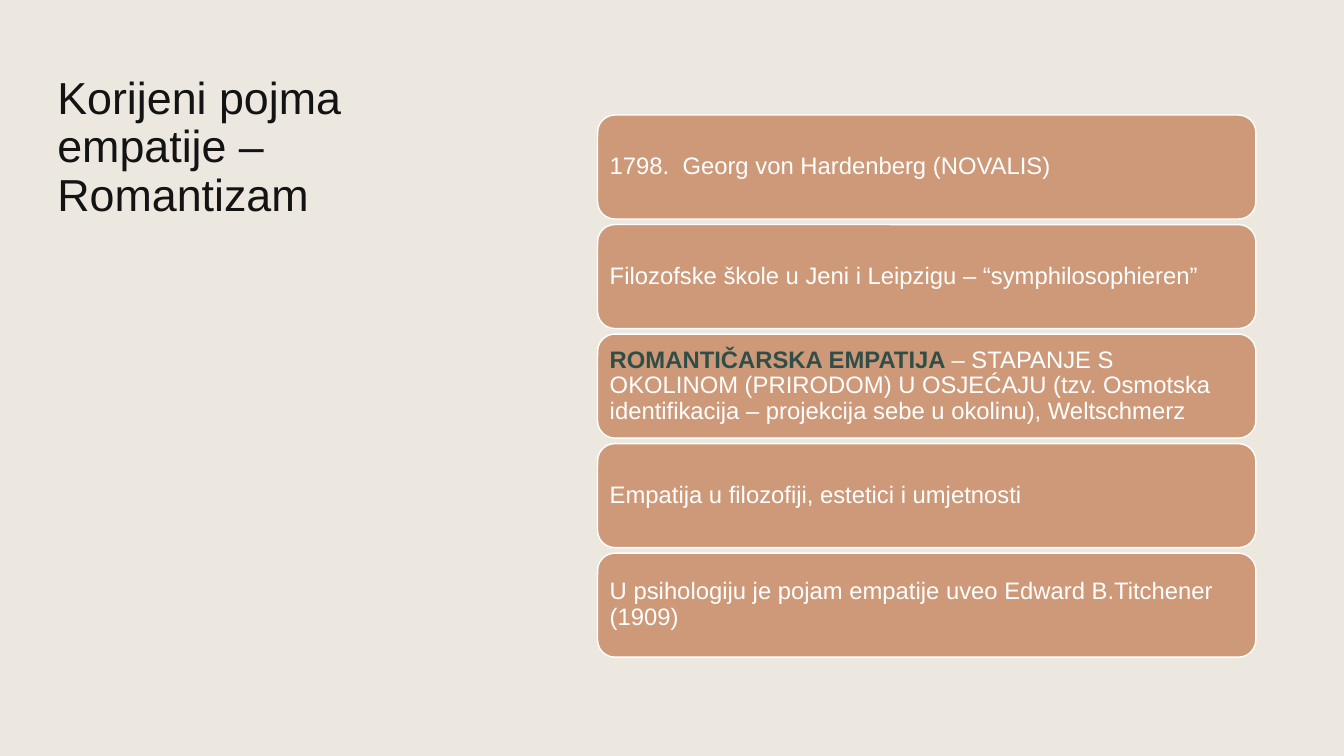
import dataclasses
import typing

import pptx
import pptx.dml.color
import pptx.enum.shapes
import pptx.enum.text
import pptx.util

Cm = pptx.util.Cm
Pt = pptx.util.Pt
RGB = pptx.dml.color.RGBColor.from_string


@dataclasses.dataclass(frozen=True)
class Theme:
    font: str = "Arial"
    background: str = "ECE8DF"
    title: str = "131313"
    card: str = "CD9979"
    light: str = "FFFFFF"
    emphasis: str = "304E48"
    title_size: int = 32
    card_size: int = 17
    line_spacing: float = 0.9


@dataclasses.dataclass(frozen=True)
class Milestone:
    text: str
    lead: str = ""


THEME = Theme()
TITLE = "Korijeni pojma empatije – Romantizam"
MILESTONES = [
    Milestone("1798.  Georg von Hardenberg (NOVALIS)"),
    Milestone("Filozofske škole u Jeni i Leipzigu – “symphilosophieren”"),
    Milestone(
        "– STAPANJE S OKOLINOM (PRIRODOM) U OSJEĆAJU (tzv. Osmotska "
        "identifikacija – projekcija sebe u okolinu), Weltschmerz",
        lead="ROMANTIČARSKA EMPATIJA ",
    ),
    Milestone("Empatija u filozofiji, estetici i umjetnosti"),
    Milestone("U psihologiju je pojam empatije uveo Edward B.Titchener (1909)"),
]

CARD_LEFT, CARD_TOP = 15.06, 2.9
CARD_WIDTH, CARD_HEIGHT = 16.59, 2.62
CARD_PITCH = 2.76
CARD_INSET = Cm(0.18)

PARAGRAPH_FORMAT = {
    "alignment": pptx.enum.text.PP_ALIGN.LEFT,
    "line_spacing": THEME.line_spacing,
}
TITLE_PLACE = {
    "left": Cm(1.19),
    "top": Cm(1.78),
    "width": Cm(11.2),
    "height": Cm(10.06),
}
TITLE_FRAME = {
    "word_wrap": True,
    "auto_size": pptx.enum.text.MSO_AUTO_SIZE.NONE,
    "vertical_anchor": pptx.enum.text.MSO_ANCHOR.TOP,
}
CARD_FRAME = {
    "word_wrap": True,
    "vertical_anchor": pptx.enum.text.MSO_ANCHOR.MIDDLE,
    "margin_left": CARD_INSET,
    "margin_right": CARD_INSET,
    "margin_top": CARD_INSET,
    "margin_bottom": CARD_INSET,
}


def apply_format(target: typing.Any, values: dict[str, typing.Any]) -> None:
    for name, value in values.items():
        setattr(target, name, value)


def add_words(paragraph: typing.Any, words: str, size: int, color: str, bold: bool = False) -> None:
    run = paragraph.add_run()
    run.text = words
    apply_format(run.font, {"name": THEME.font, "size": Pt(size), "bold": bold})
    run.font.color.rgb = RGB(color)


def write_title(slide: typing.Any) -> None:
    heading = slide.shapes.title
    apply_format(heading, TITLE_PLACE)
    apply_format(heading.text_frame, TITLE_FRAME)
    paragraph = heading.text_frame.paragraphs[0]
    apply_format(paragraph, PARAGRAPH_FORMAT)
    add_words(paragraph, TITLE, THEME.title_size, THEME.title)


def draw_milestone(slide: typing.Any, milestone: Milestone, row: int) -> None:
    card = slide.shapes.add_shape(
        pptx.enum.shapes.MSO_SHAPE.ROUNDED_RECTANGLE,
        Cm(CARD_LEFT),
        Cm(CARD_TOP + row * CARD_PITCH),
        Cm(CARD_WIDTH),
        Cm(CARD_HEIGHT),
    )
    card.shadow.inherit = False
    card.fill.solid()
    card.fill.fore_color.rgb = RGB(THEME.card)
    card.line.color.rgb = RGB(THEME.light)
    card.line.width = Pt(1)
    apply_format(card.text_frame, CARD_FRAME)
    paragraph = card.text_frame.paragraphs[0]
    apply_format(paragraph, PARAGRAPH_FORMAT)
    if milestone.lead:
        add_words(paragraph, milestone.lead, THEME.card_size, THEME.emphasis, bold=True)
    add_words(paragraph, milestone.text, THEME.card_size, THEME.light)


def main() -> None:
    deck = pptx.Presentation()
    apply_format(deck, {"slide_width": Cm(33.87), "slide_height": Cm(19.05)})
    slide = deck.slides.add_slide(deck.slide_layouts.get_by_name("Title Only"))
    slide.background.fill.solid()
    slide.background.fill.fore_color.rgb = RGB(THEME.background)
    write_title(slide)
    for row, milestone in enumerate(MILESTONES):
        draw_milestone(slide, milestone, row)
    deck.save("out.pptx")


if __name__ == "__main__":
    main()
